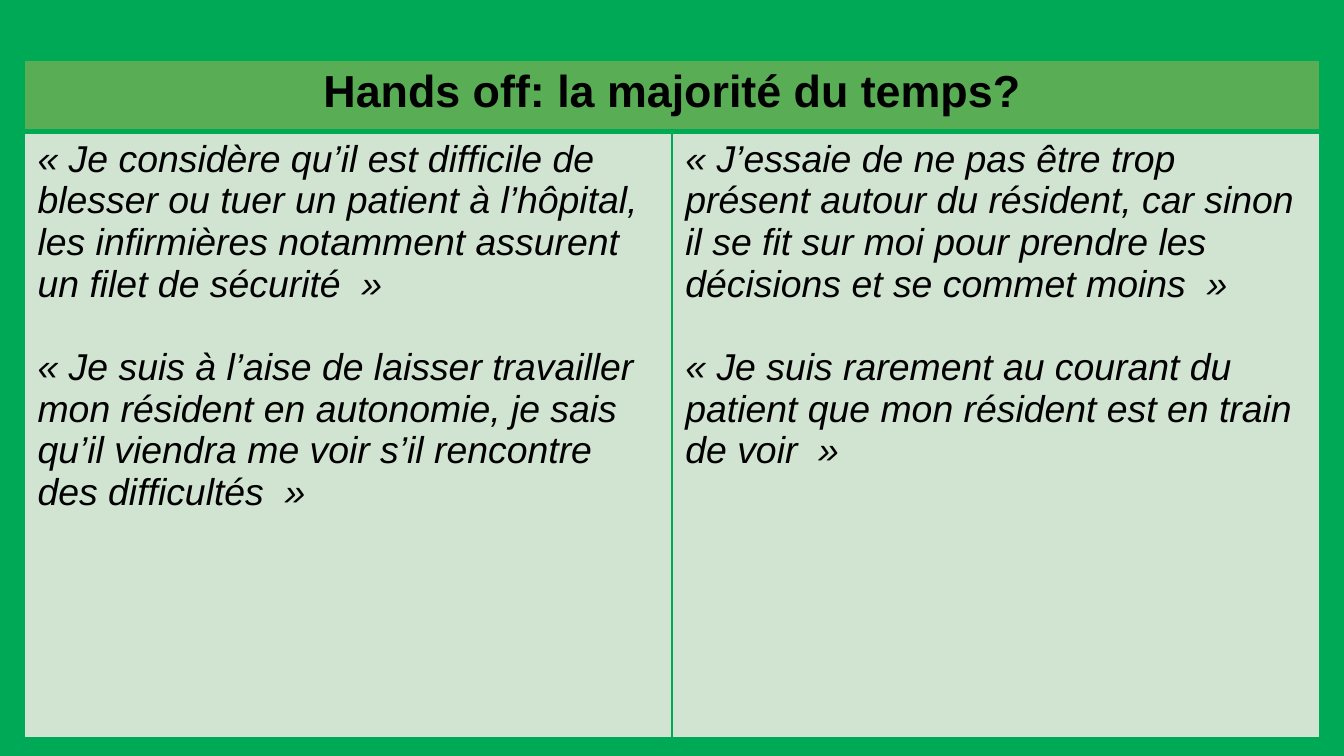
from lxml.etree import SubElement
from pptx import Presentation
from pptx.dml.color import RGBColor
from pptx.enum.text import PP_ALIGN
from pptx.oxml.ns import qn
from pptx.util import Inches, Pt

GREEN = RGBColor(0x00, 0xA9, 0x55)
HEADER_GREEN = RGBColor(0x59, 0xAD, 0x55)
PALE_GREEN = RGBColor(0xD1, 0xE3, 0xD1)
BLACK = RGBColor(0, 0, 0)

TITLE = "Hands off: la majorité du temps?"
QUOTE_COLUMNS = [
    [
        "Je considère qu’il est difficile de blesser ou tuer un patient à l’hôpital, "
        "les infirmières notamment assurent un filet de sécurité",
        "Je suis à l’aise de laisser travailler mon résident en autonomie, "
        "je sais qu’il viendra me voir s’il rencontre des difficultés",
    ],
    [
        "J’essaie de ne pas être trop présent autour du résident, car sinon "
        "il se fit sur moi pour prendre les décisions et se commet moins",
        "Je suis rarement au courant du patient que mon résident est en train de voir",
    ],
]


def write_text(frame, lines, size, bold=False, italic=False, align=PP_ALIGN.LEFT, gap=0):
    """Fill a text frame with one paragraph per line, separated by gap points."""
    for index, line in enumerate(lines):
        para = frame.paragraphs[0] if index == 0 else frame.add_paragraph()
        para.alignment = align
        if index:
            para.space_before = Pt(gap)
        span = para.add_run()
        span.text = line
        span.font.name = "Arial"
        span.font.size = Pt(size)
        span.font.bold = bold
        span.font.italic = italic
        span.font.color.rgb = BLACK


def style_cell(cell, fill, top=1, bottom=1):
    """Set the borders (in points) and the fill of a cell."""
    properties = cell._tc.get_or_add_tcPr()
    for side, width in (("L", 1), ("R", 1), ("T", top), ("B", bottom)):
        line = SubElement(properties, qn(f"a:ln{side}"), w=str(Pt(width)))
        solid = SubElement(line, qn("a:solidFill"))
        SubElement(solid, qn("a:srgbClr"), val=str(GREEN))
    cell.fill.solid()
    cell.fill.fore_color.rgb = fill


def add_quote_table(page, left, top, width, height, header_height):
    """Title row over two columns of quotations."""
    columns = len(QUOTE_COLUMNS)
    table = page.shapes.add_table(
        2, columns, Inches(left), Inches(top), Inches(width), Inches(height)
    ).table
    for column in table.columns:
        column.width = Inches(width / columns)
    table.rows[0].height = Inches(header_height)
    table.rows[1].height = Inches(height - header_height)

    # Title row
    header = table.cell(0, 0)
    for index in range(columns):
        style_cell(table.cell(0, index), HEADER_GREEN, bottom=3)
    header.merge(table.cell(0, columns - 1))
    write_text(header.text_frame, [TITLE], size=24, bold=True, align=PP_ALIGN.CENTER)

    # Quotations
    for index, quotes in enumerate(QUOTE_COLUMNS):
        cell = table.cell(1, index)
        style_cell(cell, PALE_GREEN, top=3)
        lines = [f"« {quote}  »" for quote in quotes]
        write_text(cell.text_frame, lines, size=20, italic=True, gap=22.3)


def main():
    deck = Presentation()
    # Widescreen 16:9
    deck.slide_width = Inches(10)
    deck.slide_height = deck.slide_width * 9 // 16
    page = deck.slides.add_slide(deck.slide_layouts[6])
    page.background.fill.solid()
    page.background.fill.fore_color.rgb = GREEN
    add_quote_table(page, left=0.18, top=0.45, width=9.64, height=5.04, header_height=0.53)
    deck.save("out.pptx")


if __name__ == "__main__":
    main()
